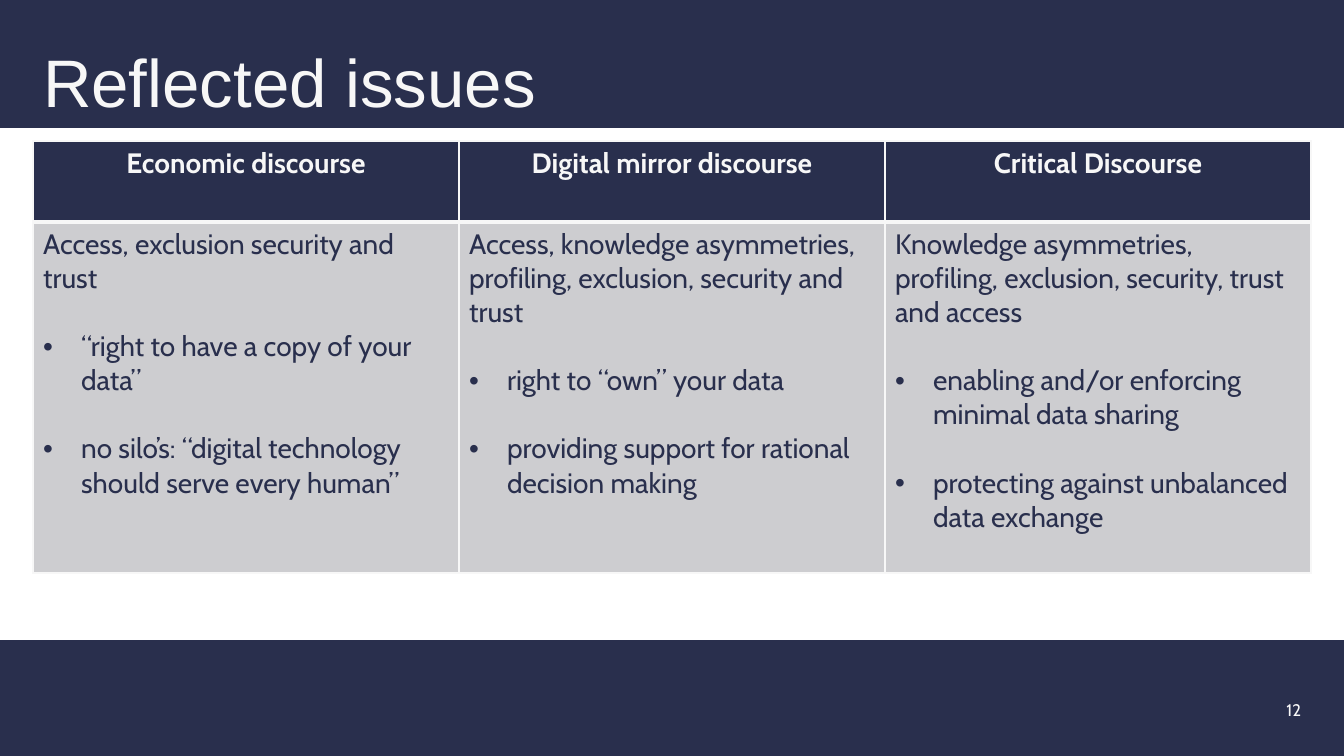
import pptx
import pptx.dml.color
import pptx.enum.shapes
import pptx.enum.text
import pptx.oxml
import pptx.oxml.ns
import pptx.util

ALIGN = pptx.enum.text.PP_ALIGN
ANCHOR = pptx.enum.text.MSO_ANCHOR
EMU_PER_PX = 914400 / 100.8
COLORS = {"navy": "292F4D", "light": "F7F7F7", "gray": "CDCDD0"}
FONTS = {
    "title": {"name": "Arial", "size": pptx.util.Pt(48), "bold": False},
    "header": {"name": "Cabin", "size": pptx.util.Pt(20), "bold": True},
    "body": {"name": "Cabin", "size": pptx.util.Pt(20), "bold": False},
    "number": {"name": "Cabin", "size": pptx.util.Pt(12), "bold": False},
}
BULLET_INDENT = 38
BLANK_LINE = pptx.util.Pt(24.4)
THIN, THICK = 1, 3

DISCOURSES = [
    ("Economic discourse",
     "Access, exclusion security and trust",
     ["“right to have a copy of your data”",
      "no silo’s: “digital technology should serve every human”"]),
    ("Digital mirror discourse",
     "Access, knowledge asymmetries, profiling, exclusion, security and trust",
     ["right to “own” your data",
      "providing support for rational decision making"]),
    ("Critical Discourse",
     "Knowledge asymmetries, profiling, exclusion, security, trust and access",
     ["enabling and/or enforcing minimal data sharing",
      "protecting against unbalanced data exchange"]),
]


def px(length):
    return pptx.util.Emu(round(length * EMU_PER_PX))


def rgb(color):
    return pptx.dml.color.RGBColor.from_string(COLORS[color])


def set_attributes(target, values):
    for name, value in values.items():
        setattr(target, name, value)


class SlideBuilder:
    def __init__(self, slide):
        self.slide = slide

    def add_text(self, paragraph, text, font, color, **formats):
        set_attributes(paragraph, formats)
        run = paragraph.add_run()
        run.text = text
        set_attributes(run.font, FONTS[font])
        run.font.color.rgb = rgb(color)

    def band(self, top, height):
        """Add a full-width band behind the title."""
        shape = self.slide.shapes.add_shape(
            pptx.enum.shapes.MSO_SHAPE.RECTANGLE, 0, px(top), px(1344), px(height))
        shape.shadow.inherit = False
        shape.fill.solid()
        shape.fill.fore_color.rgb = rgb("navy")
        shape.line.fill.background()
        self.slide.shapes.title.element.addprevious(shape.element)

    def title(self, text, left, top, width, height):
        shape = self.slide.shapes.title
        set_attributes(shape, {"left": px(left), "top": px(top),
                               "width": px(width), "height": px(height)})
        set_attributes(shape.text_frame, {
            "vertical_anchor": ANCHOR.BOTTOM, "word_wrap": True,
            "auto_size": pptx.enum.text.MSO_AUTO_SIZE.NONE})
        self.add_text(shape.text_frame.paragraphs[0], text, "title", "light",
                      alignment=ALIGN.LEFT, line_spacing=0.9)

    def page_number(self, text, left, top, width, height):
        frame = self.slide.shapes.add_textbox(
            px(left), px(top), px(width), px(height)).text_frame
        set_attributes(frame, {"word_wrap": True, "vertical_anchor": ANCHOR.BOTTOM})
        self.add_text(frame.paragraphs[0], text, "number", "light",
                      alignment=ALIGN.RIGHT)

    def style_cell(self, cell, fill, top, bottom):
        properties = cell._tc.get_or_add_tcPr()
        for side, width in {"L": THIN, "R": THIN, "T": top, "B": bottom}.items():
            properties.append(pptx.oxml.parse_xml(
                f'<a:ln{side} {pptx.oxml.ns.nsdecls("a")} w="{pptx.util.Pt(width)}">'
                f'<a:solidFill><a:srgbClr val="{COLORS["light"]}"/></a:solidFill>'
                f'</a:ln{side}>'))
        cell.fill.solid()
        cell.fill.fore_color.rgb = rgb(fill)

    def bullet(self, paragraph, text):
        properties = paragraph._p.get_or_add_pPr()
        properties.set("marL", str(px(BULLET_INDENT)))
        properties.set("indent", str(-px(BULLET_INDENT)))
        for tag in ('buFont typeface="Arial"', 'buChar char="•"'):
            name, attribute = tag.split(" ")
            properties.append(pptx.oxml.parse_xml(
                f'<a:{name} {pptx.oxml.ns.nsdecls("a")} {attribute}/>'))
        self.add_text(paragraph, text, "body", "navy", space_before=BLANK_LINE)

    def discourse_table(self, discourses, left, top, width, row_heights):
        table = self.slide.shapes.add_table(
            len(row_heights), len(discourses), px(left), px(top),
            px(width), px(sum(row_heights))).table
        table.horz_banding = False
        for row, height in zip(table.rows, row_heights):
            row.height = px(height)
        for column, (heading, issues, rights) in enumerate(discourses):
            header, body = table.cell(0, column), table.cell(1, column)
            self.style_cell(header, "navy", THIN, THICK)
            self.style_cell(body, "gray", THICK, THIN)
            self.add_text(header.text_frame.paragraphs[0], heading, "header", "light",
                          alignment=ALIGN.CENTER)
            self.add_text(body.text_frame.paragraphs[0], issues, "body", "navy")
            for right in rights:
                self.bullet(body.text_frame.add_paragraph(), right)


def main():
    presentation = pptx.Presentation()
    presentation.slide_width, presentation.slide_height = px(1344), px(756)
    slide = presentation.slides.add_slide(presentation.slide_layouts[5])
    builder = SlideBuilder(slide)
    builder.band(640, 116)
    builder.band(0, 128)
    builder.title("Reflected issues", 33, 19, 1219, 108)
    builder.page_number("12", 1240, 683, 71, 42)
    builder.discourse_table(DISCOURSES, 33, 141, 1278, [81, 351])
    presentation.save("out.pptx")


if __name__ == "__main__":
    main()
